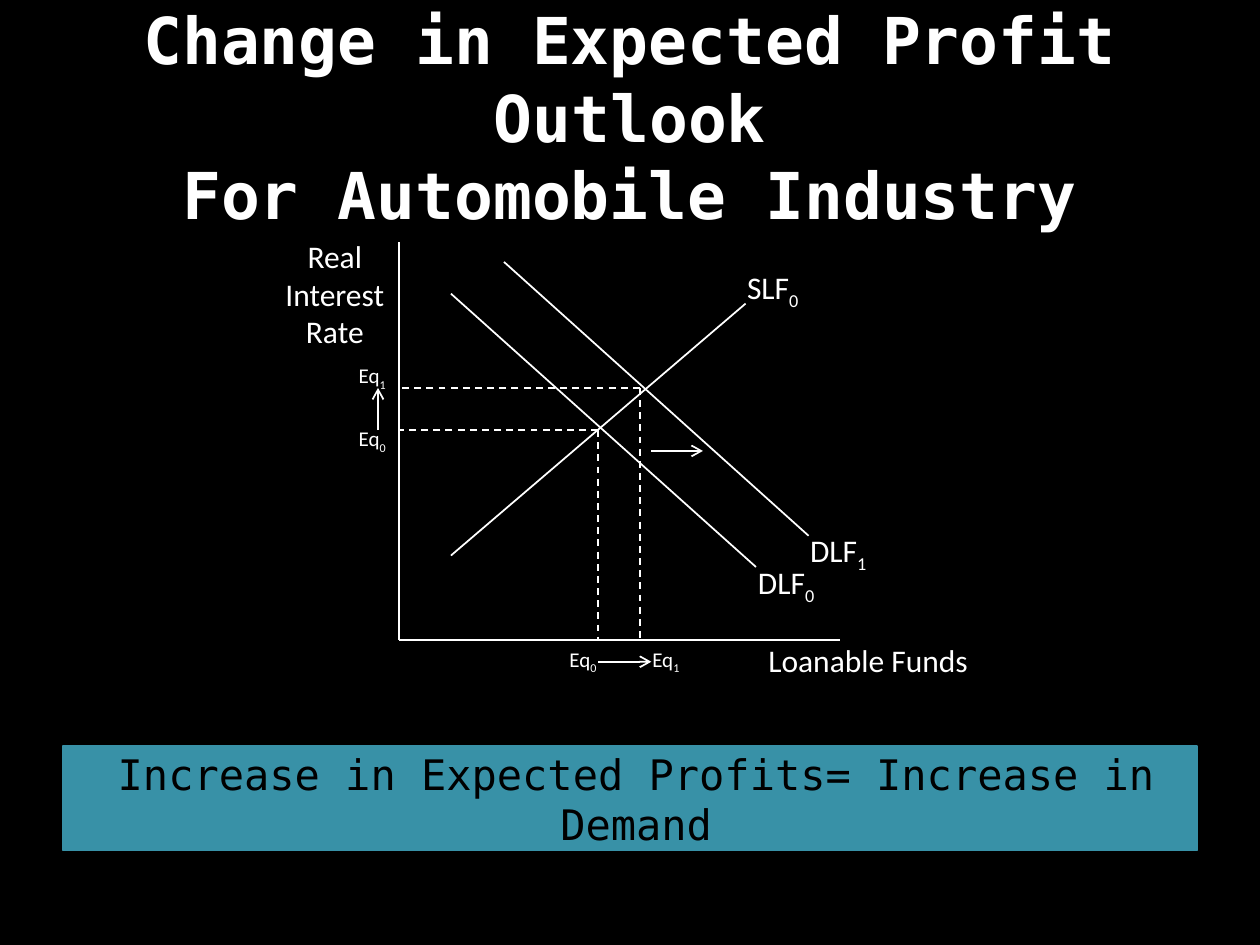
from pptx import Presentation
from pptx.dml.color import RGBColor
from pptx.enum.dml import MSO_LINE
from pptx.enum.shapes import MSO_CONNECTOR
from pptx.enum.text import MSO_ANCHOR, MSO_AUTO_SIZE, PP_ALIGN
from pptx.oxml.ns import qn
from pptx.util import Cm, Pt
from lxml.etree import SubElement

WHITE = RGBColor(0xFF, 0xFF, 0xFF)
BLACK = RGBColor(0, 0, 0)
TEAL = RGBColor(0x38, 0x91, 0xA7)
MONO = "DejaVu Sans Mono"
SANS = "Calibri"

# Graph levels in cm from the corner of the graph box
AXIS_X, AXIS_Y = 2.54, 8.25
OLD_X, NEW_X = 6.56, 7.4
OLD_Y, NEW_Y = 4.02, 3.17

# x1, y1, x2, y2
SOLID = [
    (AXIS_X, 0.23, AXIS_X, AXIS_Y),
    (AXIS_X, AXIS_Y, 11.44, AXIS_Y),
    (3.59, 1.27, 9.74, 6.78),
    (4.66, 0.63, 10.8, 6.15),
    (3.59, 6.55, 9.53, 1.47),
]
DASHED = [
    (OLD_X, OLD_Y, AXIS_X, OLD_Y),
    (NEW_X, NEW_Y, AXIS_X, NEW_Y),
    (OLD_X, OLD_Y, OLD_X, AXIS_Y),
    (NEW_X, NEW_Y, NEW_X, AXIS_Y),
]
ARROWS = [
    (2.12, OLD_Y, 2.12, NEW_Y),
    (OLD_X, 8.69, 7.63, 8.69),
    (7.63, 4.44, 8.67, 4.44),
]
# name, subscript, x, y, width
CURVES = [
    ("DLF", "0", 9.53, 6.58, 1.7),
    ("DLF", "1", 10.58, 5.94, 1.7),
    ("SLF", "0", 9.31, 0.63, 1.6),
    ("Loanable Funds", "", 9.74, 8.15, 4.72),
]
# subscript, x, y
POINTS = [("0", 5.73, AXIS_Y), ("0", 1.48, 3.81),
          ("1", NEW_X, AXIS_Y), ("1", 1.48, 2.54)]


def add_run(para, text, size, face, color, bold=False):
    run = para.add_run()
    run.text = text
    font = run.font
    font.size, font.name, font.bold = Pt(size), face, bold
    font.color.rgb = color
    return run


def place(shape, box):
    shape.left, shape.top, shape.width, shape.height = map(Cm, box)
    frame = shape.text_frame
    frame.word_wrap = True
    frame.auto_size = MSO_AUTO_SIZE.NONE
    frame.vertical_anchor = MSO_ANCHOR.MIDDLE
    para = frame.paragraphs[0]
    para.alignment = PP_ALIGN.CENTER
    return frame, para


def fill_title(slide, box):
    para = place(slide.shapes.title, box)[1]
    add_run(para, "Change in Expected Profit Outlook", 36.9, MONO, WHITE, True)
    para.add_line_break()
    add_run(para, "For Automobile Industry", 36.9, MONO, WHITE, True)


def fill_banner(slide, box):
    body = slide.placeholders[1]
    frame, para = place(body, box)
    frame.margin_left = Cm(0.5)
    body.fill.solid()
    body.fill.fore_color.rgb = TEAL
    body.line.color.rgb = TEAL
    body.line.width = Pt(0.75)
    props = para._p.get_or_add_pPr()
    props.set("marL", "0")
    props.set("indent", "0")
    SubElement(props, qn("a:buNone"))
    para.space_before = Pt(0)
    add_run(para, "Increase in Expected Profits= Increase in Demand",
            24, MONO, BLACK)


def draw_graph(slide, left, top):
    group = slide.shapes.add_group_shape().shapes

    def draw(ends, dash=False, arrow=False):
        x1, y1, x2, y2 = ends
        line = group.add_connector(
            MSO_CONNECTOR.STRAIGHT, Cm(left + x1), Cm(top + y1),
            Cm(left + x2), Cm(top + y2))
        line.line.color.rgb = WHITE
        line.line.width = Pt(1)
        if dash:
            line.line.dash_style = MSO_LINE.DASH
        if arrow:
            SubElement(line.line._get_or_add_ln(), qn("a:tailEnd"),
                       type="arrow")
        SubElement(line._element.spPr, qn("a:effectLst"))

    def label(x, y, width, height):
        box = group.add_textbox(Cm(left + x), Cm(top + y),
                                Cm(width), Cm(height))
        box.text_frame.word_wrap = False
        box.text_frame.auto_size = MSO_AUTO_SIZE.SHAPE_TO_FIT_TEXT
        return box.text_frame

    def name(text, sub, size, *box):
        para = label(*box).paragraphs[0]
        add_run(para, text, size, SANS, WHITE)
        if sub:
            run = add_run(para, sub, size, SANS, WHITE)
            run.font._element.set("baseline", "-25000")

    for ends in ARROWS:
        draw(ends, arrow=True)
    for ends in SOLID:
        draw(ends)
    for ends in DASHED:
        draw(ends, dash=True)
    for text, sub, x, y, width in CURVES:
        name(text, sub, 18, x, y, width, 1.02)
    for sub, x, y in POINTS:
        name("Eq", sub, 12, x, y, 1.1, 0.76)

    frame = label(0, 0, 2.5, 2.56)
    for i, word in enumerate(("Real", "Interest", "Rate")):
        para = frame.add_paragraph() if i else frame.paragraphs[0]
        para.alignment = PP_ALIGN.CENTER
        add_run(para, word, 18, SANS, WHITE)


def main():
    deck = Presentation()
    deck.slide_width, deck.slide_height = Cm(25.4), Cm(19.05)
    slide = deck.slides.add_slide(deck.slide_layouts[1])
    slide.background.fill.solid()
    slide.background.fill.fore_color.rgb = BLACK
    fill_title(slide, (1.27, 0.76, 22.86, 3.18))
    draw_graph(slide, 5.5, 4.65)
    fill_banner(slide, (1.27, 15.04, 22.86, 2.11))
    deck.save("out.pptx")


if __name__ == "__main__":
    main()
